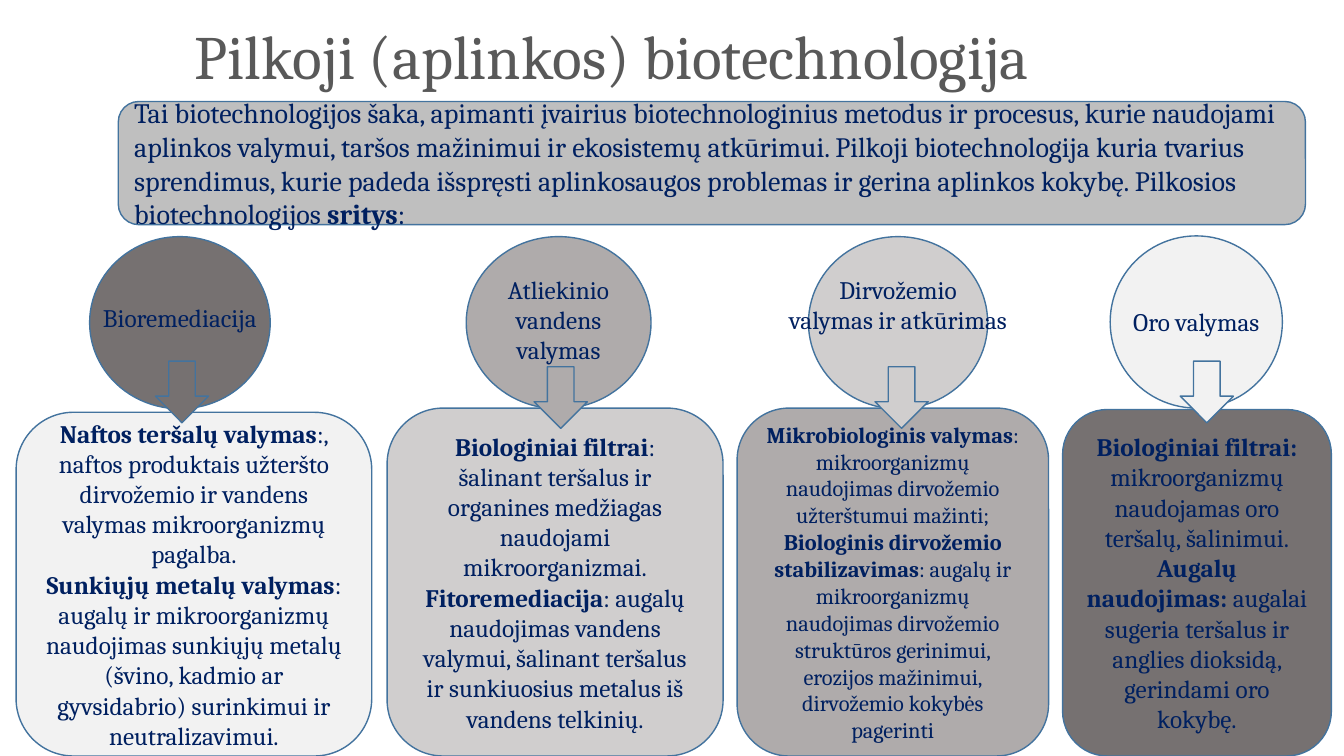
from pptx import Presentation
from pptx import util as u
from pptx.dml.color import RGBColor
from pptx.enum import shapes, text

NAVY, TITLE_GREY, OUTLINE = "002060", "595959", "43739E"
SHAPE = shapes.MSO_SHAPE
LEFT, CENTER = text.PP_ALIGN.LEFT, text.PP_ALIGN.CENTER
MIDDLE, TOP = text.MSO_ANCHOR.MIDDLE, text.MSO_ANCHOR.TOP


def rgb(value):
    return RGBColor.from_string(value)


class Deck:
    """Holds the presentation, its style and the current slide."""

    font = "Cambria"

    def __init__(self, width, height):
        self.prs = Presentation()
        self.prs.slide_width, self.prs.slide_height = u.Pt(width), u.Pt(height)
        self.s = self.prs.slides.add_slide(self.prs.slide_layouts[5])

    def add_text(self, sp, paragraphs, size, color=NAVY, align=CENTER, anchor=MIDDLE):
        """Fill sp with paragraphs, each a list of (text, bold) runs."""
        tf = sp.text_frame
        tf.word_wrap = True
        tf.auto_size = text.MSO_AUTO_SIZE.NONE
        tf.vertical_anchor = anchor
        for i, runs in enumerate(paragraphs):
            p = tf.add_paragraph() if i else tf.paragraphs[0]
            p.alignment = align
            for content, bold in runs:
                r = p.add_run()
                r.text = content
                r.font.name, r.font.size, r.font.bold = self.font, u.Pt(size), bold
                r.font.color.rgb = rgb(color)

    def title(self, content, left, top, width, height):
        sp = self.s.shapes.title
        sp.left, sp.top, sp.width, sp.height = map(u.Pt, (left, top, width, height))
        self.add_text(sp, [[(content, False)]], 44, TITLE_GREY, LEFT)
        sp.text_frame.paragraphs[0].line_spacing = 0.9

    def shape(self, kind, left, top, width, height, fill):
        sp = self.s.shapes.add_shape(kind, *map(u.Pt, (left, top, width, height)))
        sp.shadow.inherit = False
        sp.fill.solid()
        sp.fill.fore_color.rgb = rgb(fill)
        sp.line.color.rgb = rgb(OUTLINE)
        sp.line.width = u.Pt(1)
        return sp

    def label(self, lines, center, top, width=180):
        """Centre lines of text on the given x position."""
        box = self.s.shapes.add_textbox(
            u.Pt(center - width / 2), u.Pt(top), u.Pt(width), u.Pt(7 + 22 * len(lines)))
        self.add_text(box, [[(line, False)] for line in lines], 18, anchor=TOP)


# label lines, label top, circle (left, top, width), arrow (left, top),
# card (left, top, width), circle fill, card fill, text size, (heading, body) pairs
AREAS = [
    (["Bioremediacija"], 212.4, (64, 169, 129), (111, 258), (11.5, 294.5, 254),
     "767171", "F2F2F2", 18,
     [("Naftos teršalų valymas",
       ":, naftos produktais užteršto dirvožemio ir vandens valymas "
       "mikroorganizmų pagalba."),
      ("Sunkiųjų metalų valymas",
       ": augalų ir mikroorganizmų naudojimas sunkiųjų metalų (švino, kadmio ar "
       "gyvsidabrio) surinkimui ir neutralizavimui.")]),
    (["Atliekinio", "vandens", "valymas"], 192.4, (333, 169, 132), (381.5, 262),
     (276.5, 291.5, 240), "AFABAB", "D0CECE", 18,
     [("Biologiniai filtrai",
       ": šalinant teršalus ir organines medžiagas naudojami mikroorganizmai."),
      ("Fitoremediacija",
       ": augalų naudojimas vandens valymui, šalinant teršalus ir sunkiuosius "
       "metalus iš vandens telkinių.")]),
    (["Dirvožemio", "valymas ir atkūrimas"], 192.4, (577.5, 169, 128), (625, 262),
     (526.5, 291.5, 222.5), "D0CECE", "AFABAB", 16,
     [("Mikrobiologinis valymas",
       ": mikroorganizmų naudojimas dirvožemio užterštumui mažinti;"),
      ("Biologinis dirvožemio stabilizavimas",
       ": augalų ir mikroorganizmų naudojimas dirvožemio struktūros gerinimui, "
       "erozijos mažinimui, dirvožemio kokybės pagerinti")]),
    (["Oro valymas"], 215.3, (793, 168.5, 123), (843, 258), (759, 292.5, 192),
     "F2F2F2", "767171", 18,
     [("Biologiniai filtrai: ",
       "mikroorganizmų naudojamas oro teršalų, šalinimui."),
      ("Augalų naudojimas: ",
       "augalai sugeria teršalus ir anglies dioksidą, gerindami oro kokybę.")]),
]


def main():
    width, height = 960, 540
    deck = Deck(width, height)
    deck.title("Pilkoji (aplinkos) biotechnologija", 132, -2, 819, 89)

    banner = deck.shape(SHAPE.ROUNDED_RECTANGLE, 84.5, 72.5, 848, 88, "BFBFBF")
    deck.add_text(banner, [[
        ("Tai biotechnologijos šaka, apimanti įvairius biotechnologinius metodus ir "
         "procesus, kurie naudojami aplinkos valymui, taršos mažinimui ir ekosistemų "
         "atkūrimui. Pilkoji biotechnologija kuria tvarius sprendimus, kurie padeda "
         "išspręsti aplinkosaugos problemas ir gerina aplinkos kokybę. Pilkosios "
         "biotechnologijos ", False),
        ("sritys", True),
        (":", False)]], 20, align=LEFT)

    for (lines, label_top, circle, arrow, card,
         circle_fill, card_fill, size, topics) in AREAS:
        deck.shape(SHAPE.OVAL, *circle, 123, circle_fill)
        sp = deck.shape(SHAPE.ROUNDED_RECTANGLE, *card, height - card[1], card_fill)
        deck.add_text(sp, [[(head, True), (body, False)] for head, body in topics], size)
        deck.shape(SHAPE.DOWN_ARROW, *arrow, 38, 44, circle_fill)
        deck.label(lines, circle[0] + circle[2] / 2, label_top)

    deck.prs.save("out.pptx")


if __name__ == "__main__":
    main()
